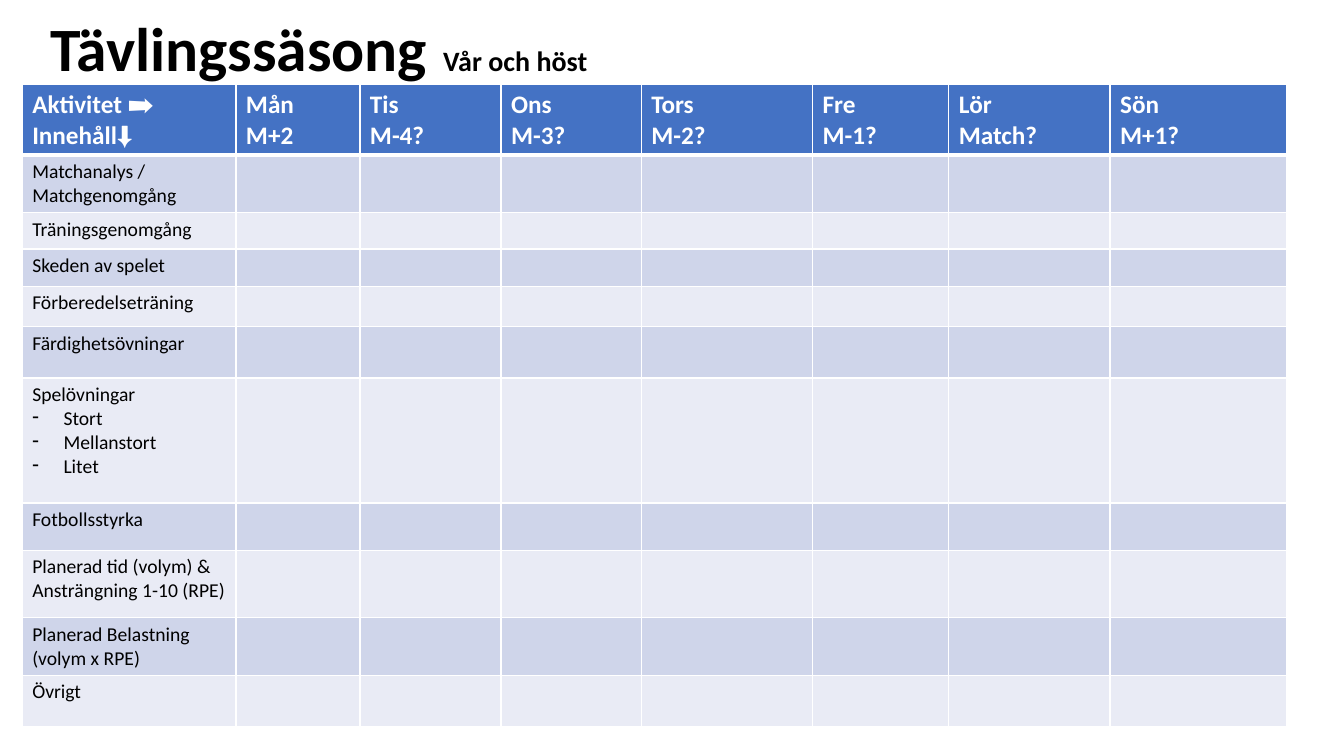
from dataclasses import dataclass

from lxml import etree
from pptx import Presentation
from pptx import util as u
from pptx.dml import color
from pptx.enum import text
from pptx.oxml import ns


@dataclass(frozen=True)
class Theme:
    font: str = "Calibri"
    black: str = "000000"
    white: str = "FFFFFF"
    header: str = "4472C4"
    bands: tuple = ("CFD5EA", "E9EBF5")
    title_size: int = 44
    gap_size: int = 49
    subtitle_size: int = 20
    header_size: int = 18
    body_size: int = 14
    thin: float = 1
    thick: float = 3


THEME = Theme()

COLUMN_WIDTHS = [2.12, 1.23, 1.4, 1.39, 1.7, 1.35, 1.6, 1.75]
HEADER_HEIGHT = 0.7
HEADERS = [
    ("Aktivitet ➡️", "Innehåll⬇️"),
    ("Mån", "M+2"),
    ("Tis", "M-4?"),
    ("Ons", "M-3?"),
    ("Tors", "M-2?"),
    ("Fre", "M-1?"),
    ("Lör", "Match?"),
    ("Sön", "M+1?"),
]
# Height, label and dashed sub-items of each activity row
ACTIVITIES = [
    (0.57, "Matchanalys / Matchgenomgång", ()),
    (0.36, "Träningsgenomgång", ()),
    (0.37, "Skeden av spelet", ()),
    (0.4, "Förberedelseträning", ()),
    (0.51, "Färdighetsövningar", ()),
    (1.24, "Spelövningar", ("Stort", "Mellanstort", "Litet")),
    (0.47, "Fotbollsstyrka", ()),
    (0.67, "Planerad tid (volym) & Ansträngning 1-10 (RPE)", ()),
    (0.57, "Planerad Belastning (volym x RPE)", ()),
    (0.51, "Övrigt", ()),
]


def add_span(para, words, size, shade=THEME.black, bold=False):
    span = para.add_run()
    span.text = words
    span.font.name = THEME.font
    span.font.size = u.Pt(size)
    span.font.bold = bold
    span.font.color.rgb = color.RGBColor.from_string(shade)


def add_dash(para, indent=0.31):
    """Give the paragraph a hanging dash bullet."""
    properties = para._p.get_or_add_pPr()
    properties.set("marL", str(u.Inches(indent)))
    properties.set("indent", str(-u.Inches(indent)))
    etree.SubElement(properties, ns.qn("a:buChar")).set("char", "-")


def style_cell(cell, fill, top=THEME.thin, bottom=THEME.thin):
    """Set white borders and a solid fill."""
    properties = cell._tc.get_or_add_tcPr()
    widths = {"lnL": THEME.thin, "lnR": THEME.thin, "lnT": top, "lnB": bottom}
    for side, width in widths.items():
        line = etree.SubElement(properties, ns.qn(f"a:{side}"), w=str(u.Pt(width)))
        solid = etree.SubElement(line, ns.qn("a:solidFill"))
        etree.SubElement(solid, ns.qn("a:srgbClr"), val=THEME.white)
    cell.fill.solid()
    cell.fill.fore_color.rgb = color.RGBColor.from_string(fill)


def add_title(page, left, top, width, height):
    box = page.shapes.add_textbox(*map(u.Inches, (left, top, width, height)))
    frame = box.text_frame
    frame.word_wrap = True
    frame.vertical_anchor = text.MSO_ANCHOR.BOTTOM
    frame.margin_bottom = u.Inches(0.35)
    para = frame.paragraphs[0]
    para.alignment = text.PP_ALIGN.CENTER
    para.line_spacing = 0.9
    add_span(para, "Tävlingssäsong", THEME.title_size, bold=True)
    add_span(para, " ", THEME.gap_size, bold=True)
    add_span(para, "Vår och höst", THEME.subtitle_size, bold=True)


def fill_header(cells):
    for cell, (day, match_day) in zip(cells, HEADERS):
        style_cell(cell, THEME.header, bottom=THEME.thick)
        frame = cell.text_frame
        for para, words in ((frame.paragraphs[0], day), (frame.add_paragraph(), match_day)):
            add_span(para, words, THEME.header_size, THEME.white, bold=True)


def fill_activity(cells, index, label, items):
    top = THEME.thick if index == 0 else THEME.thin
    for cell in cells:
        style_cell(cell, THEME.bands[index % 2], top=top)
        end = cell.text_frame.paragraphs[0]._p.get_or_add_endParaRPr()
        end.set("sz", str(THEME.body_size * 100))
    frame = cells[0].text_frame
    add_span(frame.paragraphs[0], label, THEME.body_size)
    for item in items:
        para = frame.add_paragraph()
        add_dash(para)
        add_span(para, item, THEME.body_size)


def add_week_plan(page, left, top):
    heights = [HEADER_HEIGHT] + [height for height, _, _ in ACTIVITIES]
    table = page.shapes.add_table(
        len(heights), len(COLUMN_WIDTHS), u.Inches(left), u.Inches(top),
        u.Inches(sum(COLUMN_WIDTHS)), u.Inches(sum(heights)),
    ).table
    for column, width in zip(table.columns, COLUMN_WIDTHS):
        column.width = u.Inches(width)
    for row, height in zip(table.rows, heights):
        row.height = u.Inches(height)
    header, *rows = [list(row.cells) for row in table.rows]
    fill_header(header)
    for index, (cells, (_, label, items)) in enumerate(zip(rows, ACTIVITIES)):
        fill_activity(cells, index, label, items)


def main():
    deck = Presentation()
    deck.slide_width = u.Inches(13.33)
    deck.slide_height = u.Inches(7.5)
    page = deck.slides.add_slide(deck.slide_layouts[6])
    add_title(page, 0, -0.14, 6.33, 1.35)
    add_week_plan(page, 0.22, 0.84)
    deck.save("out.pptx")


if __name__ == "__main__":
    main()
